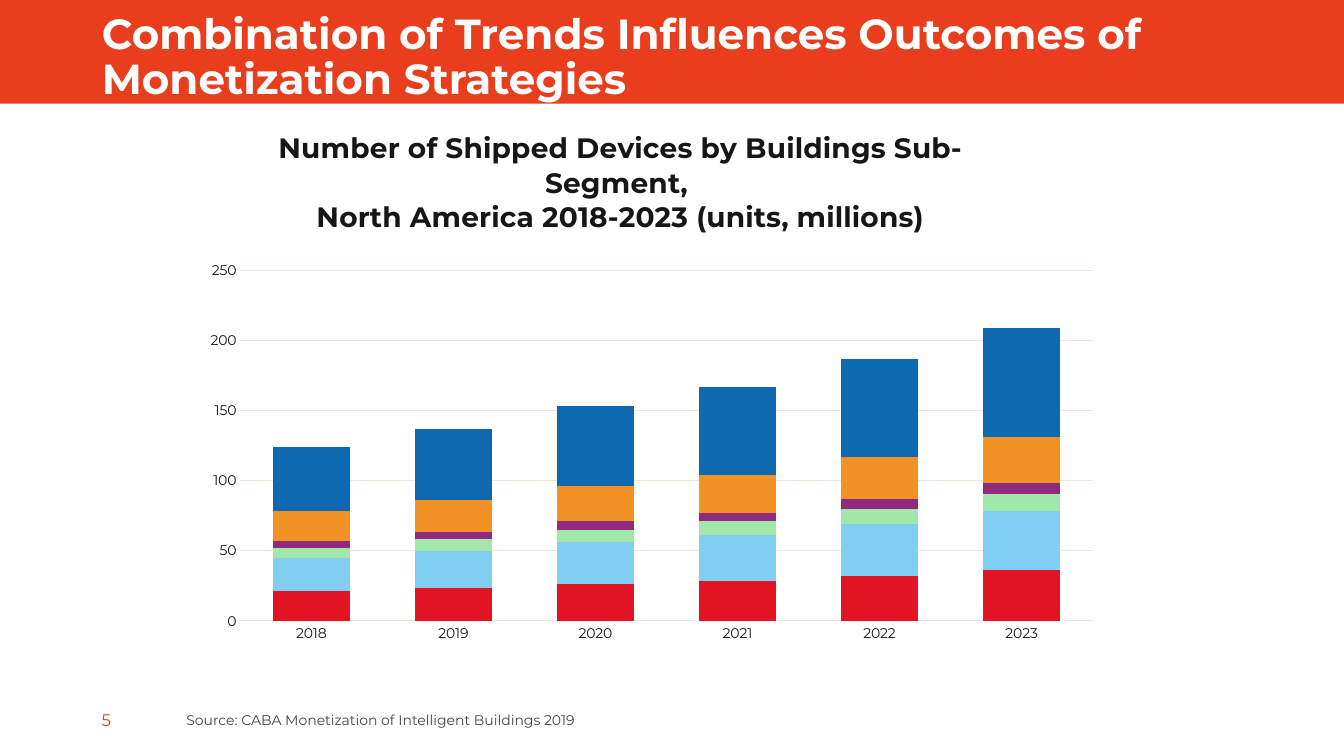
from lxml.etree import SubElement
from pptx import Presentation
from pptx.chart.data import CategoryChartData
from pptx.dml.color import RGBColor
from pptx.enum.chart import XL_CHART_TYPE, XL_TICK_MARK
from pptx.enum.shapes import MSO_SHAPE
from pptx.enum.text import MSO_ANCHOR, PP_ALIGN
from pptx.oxml import parse_xml
from pptx.oxml.ns import nsdecls, qn
from pptx.util import Inches, Pt

FONT = "Montserrat"
ORANGE_RED = RGBColor(0xE8, 0x3E, 0x1D)
WHITE = RGBColor(0xFF, 0xFF, 0xFF)
INK = RGBColor(0x16, 0x16, 0x16)
GRAY = RGBColor(0x46, 0x46, 0x46)
GRID = RGBColor(0xFC, 0xE2, 0xDD)

YEARS = ["2018", "2019", "2020", "2021", "2022", "2023"]
SERIES = [
    ("Series 1", (21, 23, 26, 28, 32, 36), RGBColor(0xE2, 0x13, 0x22)),
    ("Series 2", (24, 27, 30, 33, 37, 42), RGBColor(0x80, 0xCE, 0xF2)),
    ("Series 3", (7, 8, 9, 10, 11, 12), RGBColor(0xA1, 0xE7, 0xA9)),
    ("Series 4", (5, 5, 6, 6, 7, 8), RGBColor(0x90, 0x2A, 0x81)),
    ("Series 5", (21, 23, 25, 27, 30, 33), RGBColor(0xF2, 0x92, 0x25)),
    ("Series 6", (46, 51, 57, 63, 70, 78), RGBColor(0x0E, 0x69, 0xB0)),
]


def style_font(font, size, color, bold=False):
    font.name = FONT
    font.size = Pt(size)
    font.bold = bold
    font.color.rgb = color


def set_layout(parent, index, **settings):
    """Give a chart part a manual layout, in fractions of the chart area."""
    for old_layout in parent.findall(qn("c:layout")):
        parent.remove(old_layout)
    layout = parse_xml(f"<c:layout {nsdecls('c')}><c:manualLayout/></c:layout>")
    for name, value in settings.items():
        SubElement(layout[0], qn(f"c:{name}")).set("val", str(value))
    parent.insert(index, layout)


presentation = Presentation()
presentation.slide_width = Inches(13.33)
presentation.slide_height = Inches(7.5)
slide = presentation.slides.add_slide(presentation.slide_layouts[5])

# Title on its band
title = slide.shapes.title
title.left, title.top = Inches(0.91), Inches(0.08)
title.width, title.height = Inches(11.1), Inches(0.49)
title.text_frame.text = "Combination of Trends Influences Outcomes of Monetization Strategies"
title.text_frame.word_wrap = True
title.text_frame.vertical_anchor = MSO_ANCHOR.TOP
heading = title.text_frame.paragraphs[0]
heading.alignment = PP_ALIGN.LEFT
heading.line_spacing = 0.9
style_font(heading.runs[0].font, 30, WHITE, bold=True)

band = slide.shapes.add_shape(MSO_SHAPE.RECTANGLE, 0, 0, presentation.slide_width, Inches(1.03))
band.shadow.inherit = False
band.fill.solid()
band.fill.fore_color.rgb = ORANGE_RED
band.line.fill.background()
title.element.addprevious(band.element)

# Stacked column chart
chart_data = CategoryChartData(number_format="#,##0")
chart_data.categories = YEARS
for name, values, color in SERIES:
    chart_data.add_series(name, values)
chart = slide.shapes.add_chart(
    XL_CHART_TYPE.COLUMN_STACKED,
    Inches(1.91), Inches(1.2), Inches(9.11), Inches(5.27), chart_data,
).chart
style_font(chart.font, 10, INK)
chart.has_legend = False

chart.has_title = True
chart_title = chart.chart_title
chart_title.text_frame.text = (
    "Number of Shipped Devices by Buildings Sub-Segment, \n"
    "North America 2018-2023 (units, millions)"
)
for paragraph in chart_title.text_frame.paragraphs:
    paragraph.alignment = PP_ALIGN.CENTER
    style_font(paragraph.runs[0].font, 20, INK, bold=True)
set_layout(chart_title.element if hasattr(chart_title, "element") else chart_title._element,
           1, xMode="edge", yMode="edge", x=0.09, y=0.01)
set_layout(chart.element.chart.plotArea if hasattr(chart, "element") else chart._chartSpace.chart.plotArea,
           0, layoutTarget="inner", xMode="edge", yMode="edge", x=0.052, y=0.281, w=0.928, h=0.66)

plot = chart.plots[0]
plot.gap_width = 85
plot.overlap = 100
plot.vary_by_categories = False
for series, (name, values, color) in zip(plot.series, SERIES):
    series.format.fill.solid()
    series.format.fill.fore_color.rgb = color

for axis in (chart.category_axis, chart.value_axis):
    axis.major_tick_mark = XL_TICK_MARK.NONE
    axis.minor_tick_mark = XL_TICK_MARK.NONE
    style_font(axis.tick_labels.font, 10, INK)
value_axis = chart.value_axis
value_axis.minimum_scale = 0
value_axis.maximum_scale = 250
value_axis.major_unit = 50
value_axis.tick_labels.number_format = "#,##0"
value_axis.tick_labels.number_format_is_linked = False
value_axis.format.line.fill.background()
value_axis.has_major_gridlines = True
for line in (chart.category_axis.format.line, value_axis.major_gridlines.format.line):
    line.color.rgb = GRID
    line.width = Pt(0.75)

# Footer
for text, left, top, width, height, size, color in (
    ("5", 0.91, 6.95, 0.68, 0.39, 12, ORANGE_RED),
    ("Source: CABA Monetization of Intelligent Buildings 2019", 1.75, 7.01, 6.21, 0.27, 10, GRAY),
):
    footer = slide.shapes.add_textbox(Inches(left), Inches(top), Inches(width), Inches(height))
    footer.text_frame.word_wrap = True
    footer.text_frame.vertical_anchor = MSO_ANCHOR.MIDDLE
    footer.text_frame.text = text
    style_font(footer.text_frame.paragraphs[0].runs[0].font, size, color)

presentation.save("out.pptx")
